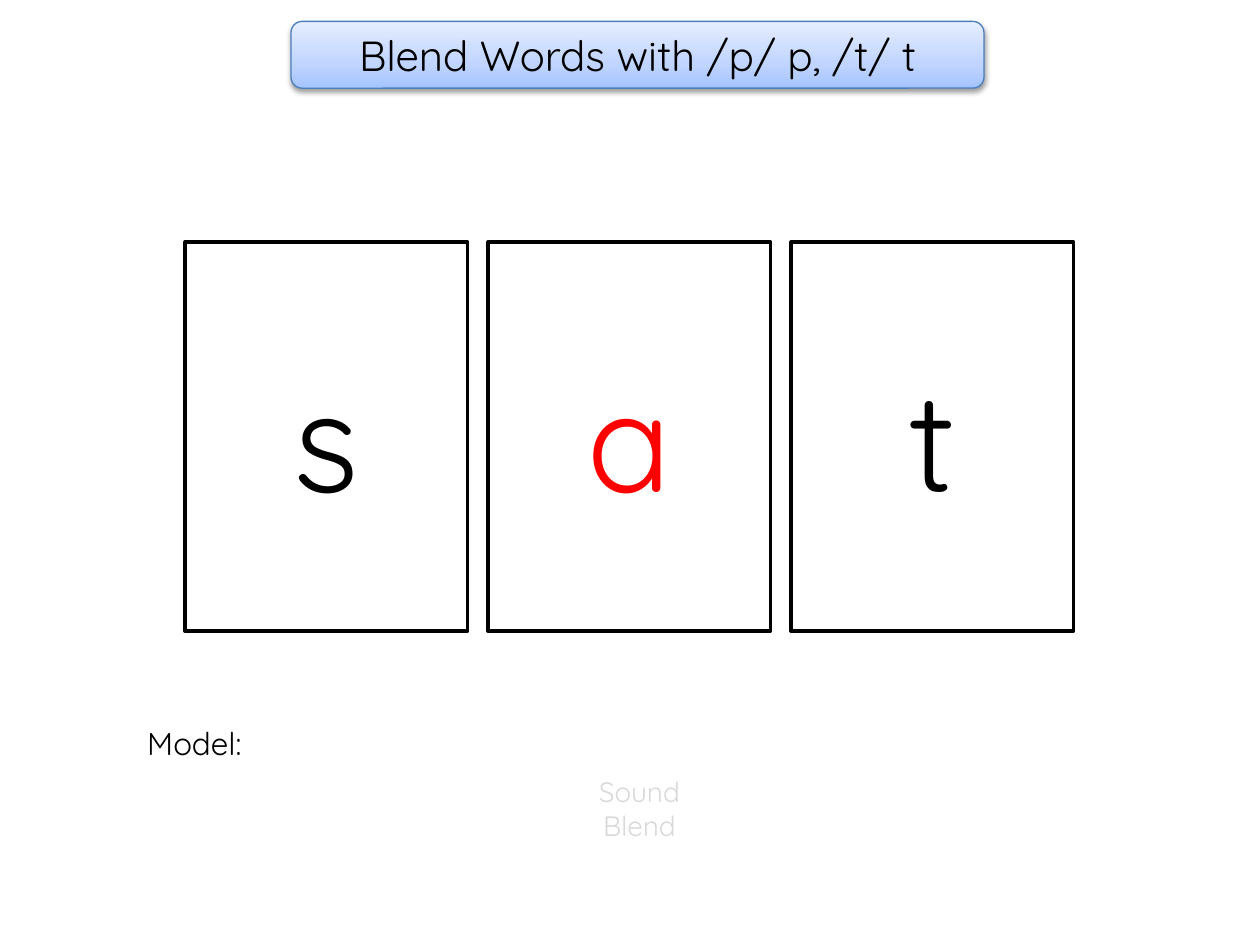
"""Build the slide for blending the sounds of the word sat."""
import copy

import pptx
import pptx.dml.color
import pptx.enum.shapes
import pptx.enum.text
import pptx.oxml
import pptx.oxml.ns
import pptx.util
from pptx.util import Inches

COLORS = {
    "black": "000000",
    "white": "FFFFFF",
    "vowel": "FF0000",
    "hint": "D9D9D9",
    "banner_line": "4B7EBC",
    "banner_low": "A4C4FF",
    "banner_mid": "BFD4FF",
    "banner_high": "E6EEFF",
}
FONT = "Quicksand"
CENTER = pptx.enum.text.PP_ALIGN.CENTER
LEFT = pptx.enum.text.PP_ALIGN.LEFT
MIDDLE = pptx.enum.text.MSO_ANCHOR.MIDDLE
SHAPES = pptx.enum.shapes.MSO_SHAPE
AUTO_SIZE = pptx.enum.text.MSO_AUTO_SIZE


def rgb(name):
    return pptx.dml.color.RGBColor.from_string(COLORS[name])


def write(frame, text, size, color, align=CENTER):
    frame.word_wrap = True
    frame.text = text
    for paragraph in frame.paragraphs:
        paragraph.alignment = align
        paragraph.font.name = FONT
        paragraph.font.size = pptx.util.Pt(size)
        paragraph.font.color.rgb = rgb(color)


deck = pptx.Presentation()
deck.slide_width, deck.slide_height = Inches(10), Inches(7.5)
slide = deck.slides.add_slide(deck.slide_layouts[5])

banner_place = Inches(2.31), Inches(0.17), Inches(5.5), Inches(0.53)
banner = slide.shapes.add_shape(SHAPES.ROUNDED_RECTANGLE, *banner_place)
banner.line.color.rgb = rgb("banner_line")
banner.line.width = pptx.util.Pt(0.75)
banner.fill.gradient()
banner.fill.gradient_angle = 90
banner_properties = banner._element.spPr
stop_list = banner_properties.find(".//" + pptx.oxml.ns.qn("a:gsLst"))
stop_list.insert(1, copy.deepcopy(stop_list[0]))
banner_stops = [(0, "banner_low"), (0.35, "banner_mid"), (1, "banner_high")]
for stop, (position, color) in zip(banner.fill.gradient_stops, banner_stops):
    stop.position = position
    stop.color.rgb = rgb(color)
banner.shadow.inherit = False
banner_properties.find(pptx.oxml.ns.qn("a:effectLst")).append(pptx.oxml.parse_xml(
    f'<a:outerShdw {pptx.oxml.ns.nsdecls("a")} blurRad="{pptx.util.Pt(3.1)}" '
    f'dist="{pptx.util.Pt(1.6)}" dir="5400000" rotWithShape="0">'
    f'<a:srgbClr val="{COLORS["black"]}"><a:alpha val="38000"/></a:srgbClr>'
    '</a:outerShdw>'))

title = slide.shapes.title
title.left, title.top, title.width, title.height = banner_place
write(title.text_frame, "Blend Words with /p/ p, /t/ t", 24, "black")
title.text_frame.vertical_anchor = MIDDLE
title.text_frame.auto_size = AUTO_SIZE.NONE
slide.shapes._spTree.append(title._element)

steps = slide.shapes.add_textbox(Inches(0.34), Inches(6.1), Inches(9.47), Inches(0.64))
write(steps.text_frame, "Sound\nBlend", 16, "hint")
steps.text_frame.auto_size = AUTO_SIZE.SHAPE_TO_FIT_TEXT

model = slide.shapes.add_textbox(Inches(1.07), Inches(5.7), Inches(1.45), Inches(0.4))
write(model.text_frame, "Model:", 18, "black", LEFT)
model.text_frame.auto_size = AUTO_SIZE.SHAPE_TO_FIT_TEXT

for column, letter in enumerate("sat"):
    card = slide.shapes.add_shape(
        SHAPES.RECTANGLE, Inches(1.47 + 2.405 * column), Inches(1.92),
        Inches(2.24), Inches(3.09))
    card.shadow.inherit = False
    card.fill.solid()
    card.fill.fore_color.rgb = rgb("white")
    card.line.color.rgb = rgb("black")
    card.line.width = pptx.util.Pt(2)
    write(card.text_frame, letter, 80, "vowel" if letter == "a" else "black")
    card.text_frame.vertical_anchor = MIDDLE

deck.save("out.pptx")
